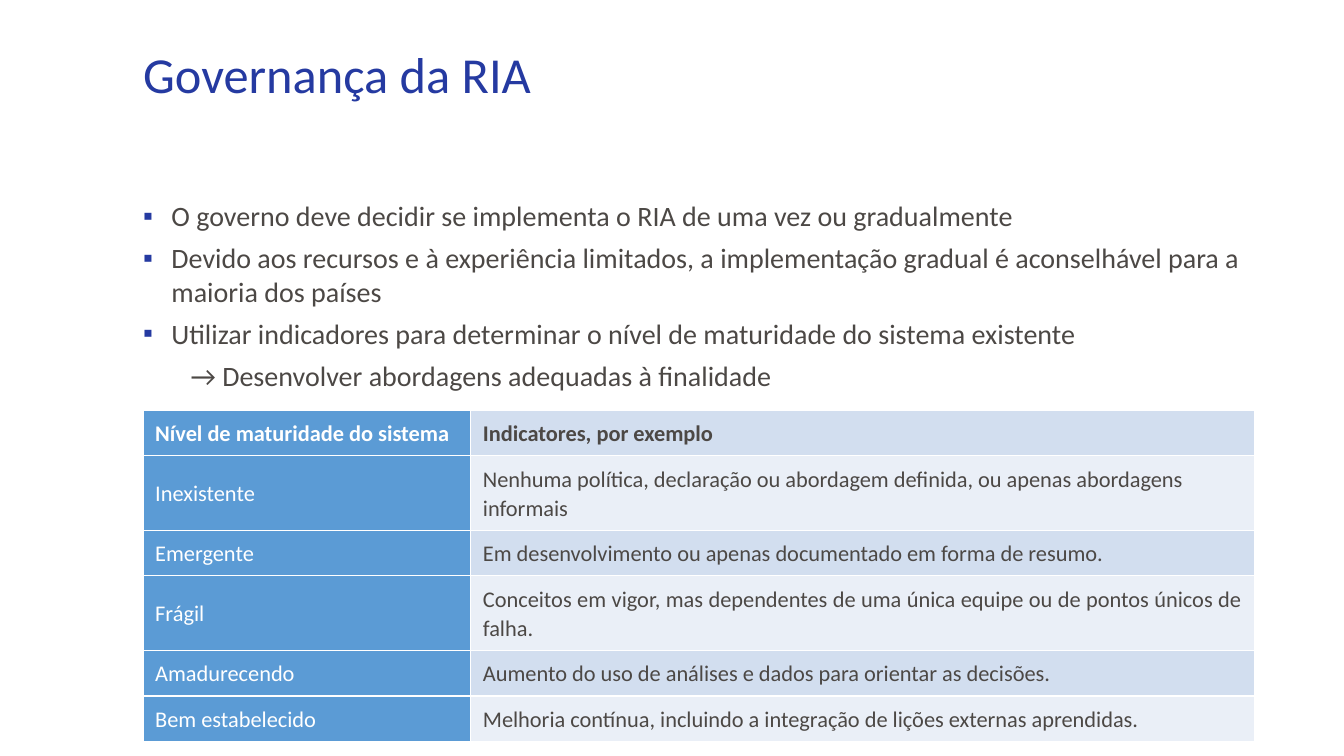
import pptx
import pptx.dml.color
import pptx.enum.text
import pptx.oxml
import pptx.oxml.ns
import pptx.util
from pptx.util import Inches

FONT = "Calibri"
NAVY, GREY, WHITE = "253AA1", "4C4845", "FFFFFF"
BLUE, BANDS = "5B9BD5", ("D2DEEF", "EAEFF7")
ANCHOR = pptx.enum.text.MSO_ANCHOR
ALIGN = pptx.enum.text.PP_ALIGN

TITLE = "Governança da RIA"
POINTS = [
    "O governo deve decidir se implementa o RIA de uma vez ou gradualmente",
    "Devido aos recursos e à experiência limitados, a implementação gradual é "
    "aconselhável para a maioria dos países",
    "Utilizar indicadores para determinar o nível de maturidade do sistema existente",
]
CONCLUSION = "→ Desenvolver abordagens adequadas à finalidade"
# Level, indicator, alignment of the indicator, row height
LEVELS = [
    ("Nível de maturidade do sistema", "Indicatores, por exemplo", ALIGN.JUSTIFY, 0.45),
    ("Inexistente", "Nenhuma política, declaração ou abordagem definida, ou apenas "
     "abordagens informais", ALIGN.LEFT, 0.74),
    ("Emergente", "Em desenvolvimento ou apenas documentado em forma de resumo.",
     ALIGN.LEFT, 0.45),
    ("Frágil", "Conceitos em vigor, mas dependentes de uma única equipe ou de pontos "
     "únicos de falha.", ALIGN.JUSTIFY, 0.74),
    ("Amadurecendo", "Aumento do uso de análises e dados para orientar as decisões.",
     ALIGN.LEFT, 0.45),
    ("Bem estabelecido", "Melhoria contínua, incluindo a integração de lições externas "
     "aprendidas.", ALIGN.LEFT, 0.45),
]


def rgb(color):
    return pptx.dml.color.RGBColor.from_string(color)


def add_xml(parent, xml):
    ns = pptx.oxml.ns.nsdecls("a")
    parent.append(pptx.oxml.parse_xml(xml.replace(">", f" {ns}>", 1)))


def style(p, size, color, bold=False):
    f = p.font
    f.name, f.size, f.bold = FONT, pptx.util.Pt(size), bold
    f.color.rgb = rgb(color)


def place(sp, box, anchor):
    """Move a placeholder to its box and clear its margins."""
    sp.left, sp.top, sp.width, sp.height = map(Inches, box)
    tf = sp.text_frame
    tf.margin_left = tf.margin_top = tf.margin_right = tf.margin_bottom = 0
    tf.vertical_anchor = anchor
    tf.word_wrap = True
    tf.auto_size = pptx.enum.text.MSO_AUTO_SIZE.NONE
    return tf


def fill_title(sp, box):
    tf = place(sp, box, ANCHOR.MIDDLE)
    tf.text = TITLE
    p = tf.paragraphs[0]
    p.alignment = ALIGN.LEFT
    style(p, 36, NAVY)


def fill_body(sp, box):
    tf = place(sp, box, ANCHOR.TOP)
    tf.text = "\n".join(POINTS + [CONCLUSION])
    for p in tf.paragraphs:
        p.space_before, p.space_after = pptx.util.Pt(0), pptx.util.Pt(6)
        pPr = p._p.get_or_add_pPr()
        if p.text == CONCLUSION:
            p.level = 1
            left, indent = 0.47, 0
            add_xml(pPr, "<a:buNone></a:buNone>")
        else:
            left, indent = 0.28, -0.28
            add_xml(pPr, f'<a:buClr><a:srgbClr val="{NAVY}"/></a:buClr>')
            add_xml(pPr, '<a:buChar char="▪"></a:buChar>')
        pPr.set("marL", str(Inches(left)))
        pPr.set("indent", str(Inches(indent)))
        style(p, 20, GREY)


def fill_cell(cell, text, fill, color, bold, align, anchor):
    # White borders come before the fill
    tcPr = cell._tc.get_or_add_tcPr()
    for side in "LRTB":
        add_xml(tcPr, f'<a:ln{side} w="12700"><a:solidFill><a:srgbClr val="{WHITE}"/>'
                      f'</a:solidFill></a:ln{side}>')
    cell.fill.solid()
    cell.fill.fore_color.rgb = rgb(fill)
    cell.margin_left = cell.margin_right = Inches(0.12)
    cell.margin_top = cell.margin_bottom = Inches(0.08)
    cell.vertical_anchor = anchor
    cell.text = text
    p = cell.text_frame.paragraphs[0]
    p.alignment, p.line_spacing = align, 1.07
    style(p, 16, color, bold)


def add_levels_table(s, box):
    left, top, width, height = map(Inches, box)
    table = s.shapes.add_table(len(LEVELS), 2, left, top, width, height).table
    table.columns[0].width = Inches(3.25)
    table.columns[1].width = width - Inches(3.25)
    for i, (level, indicator, align, row_height) in enumerate(LEVELS):
        table.rows[i].height = Inches(row_height)
        header = i == 0
        fill_cell(table.cell(i, 0), level, BLUE, WHITE, header, ALIGN.LEFT, ANCHOR.MIDDLE)
        fill_cell(table.cell(i, 1), indicator, BANDS[i % 2], GREY, header, align, ANCHOR.TOP)


def main():
    prs = pptx.Presentation()
    prs.slide_width, prs.slide_height = Inches(13.33), Inches(7.5)
    s = prs.slides.add_slide(prs.slide_layouts[1])
    left = 1.42
    fill_title(s.shapes.title, (left, 0, 9.76, 1.45))
    fill_body(s.placeholders[1], (left, 1.97, 11.04, 4.76))
    add_levels_table(s, (left, 4.07, 11.02, 3.28))
    prs.save("out.pptx")


if __name__ == "__main__":
    main()
